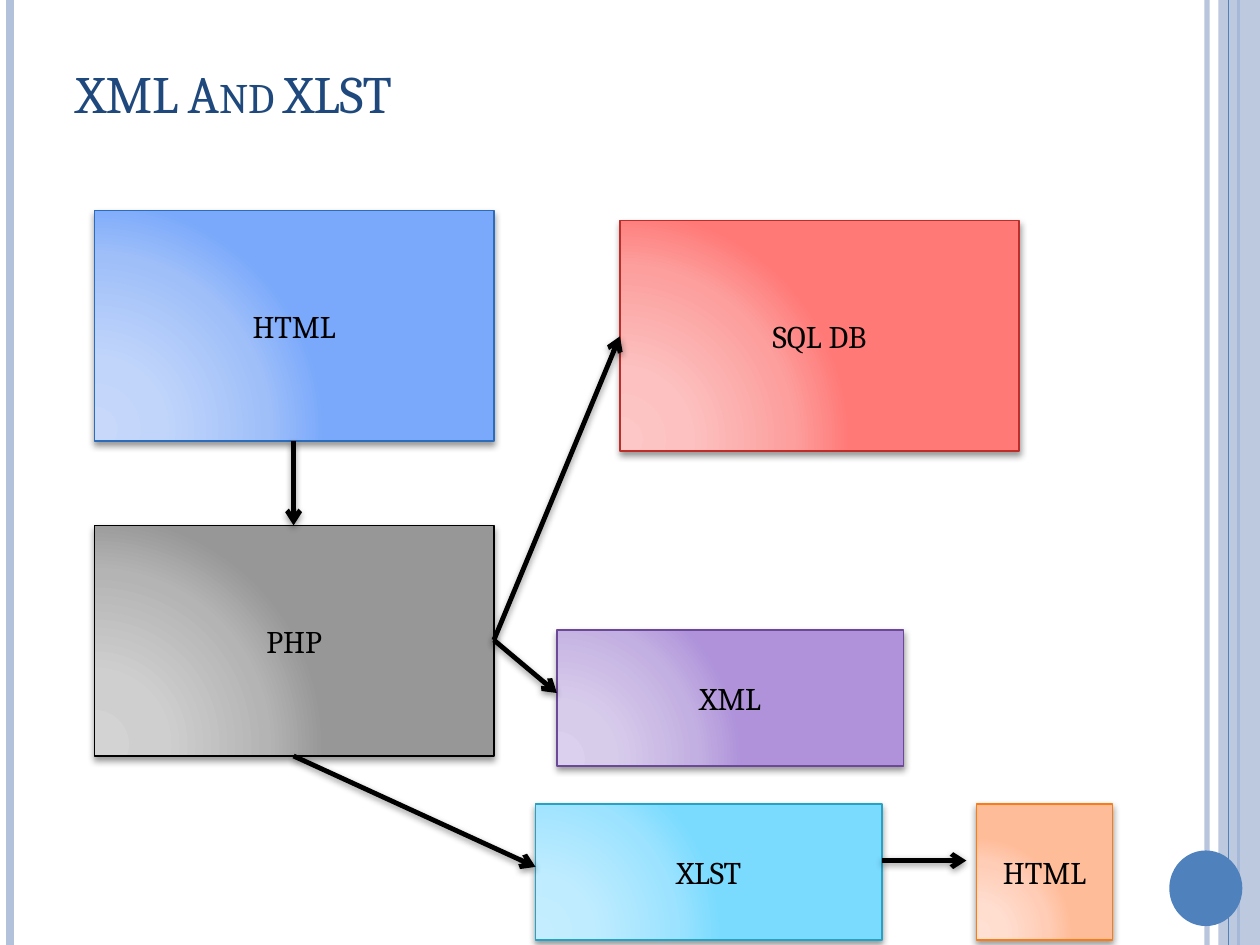
from pptx import Presentation
from pptx.dml.color import RGBColor
from pptx.enum.shapes import MSO_CONNECTOR as CONNECTOR, MSO_SHAPE as SHAPE
from pptx.enum.text import MSO_ANCHOR as ANCHOR, PP_ALIGN as ALIGN
from pptx.oxml import parse_xml
from pptx.oxml.ns import nsdecls, qn
from pptx.util import Inches, Pt

FONT = "Cambria"
TITLE = "XML And XLST"
COLORS = {"title": "1F497D", "ink": "000000", "accent": "4F81BD", "pale": "B3C1DB"}
STOPS = (0, 30, 75, 100)

RAILS = [
    (9.58, "pale", 3, 93),
    (0.08, "pale", 4.5, 100),
    (9.83, "accent", 1.5, 100),
    (9.75, "accent", 0.75, 100),
]
BAND = (9.67, 0, 0.33, 7.5)
DISC = (9.28, 6.75, 0.58, 0.6)

BOXES = [
    ("HTML", (0.75, 1.67, 3.17, 1.83), "2C6CB9", ("C7D8FB", "C1D5FA", "9FBFF9", "7AA9FB")),
    ("PHP", (0.75, 4.17, 3.17, 1.83), "000000", ("D3D3D3", "CFCFCF", "B4B4B4", "979797")),
    ("SQL DB", (4.92, 1.75, 3.17, 1.83), "BD2D29", ("FCC7C6", "FCC1C0", "FC9F9D", "FF7977")),
    ("XML", (4.42, 5, 2.75, 1.08), "6C4898", ("DBD0ED", "D8CCEB", "C3B0E2", "AF92DA")),
    ("XLST", (4.25, 6.38, 2.75, 1.08), "26A2C4", ("C4EEFF", "BFECFF", "9DE3FF", "7ADBFF")),
    ("HTML", (7.75, 6.38, 1.08, 1.08), "F97D16", ("FFE0D3", "FFDDCF", "FFCCB5", "FFBC99")),
]
ARROWS = [
    ((2.33, 3.5), (2.33, 4.17)),
    ((3.92, 5.08), (4.92, 2.67)),
    ((3.92, 5.08), (4.42, 5.5)),
    ((2.33, 6), (4.25, 6.88)),
    ((7, 6.83), (7.67, 6.83)),
]


def rgb(value):
    return RGBColor.from_string(value)


def set_alpha(properties, percent):
    color = properties.find(".//" + qn("a:srgbClr"))
    color.append(parse_xml(f'<a:alpha {nsdecls("a")} val="{percent * 1000}"/>'))


def add_shadow(shape, alpha, distance):
    shape._element.spPr.append(parse_xml(
        f'<a:effectLst {nsdecls("a")}><a:outerShdw blurRad="{Pt(4)}" dist="{Pt(distance)}" '
        f'dir="5400000" rotWithShape="0"><a:srgbClr val="{COLORS["ink"]}">'
        f'<a:alpha val="{alpha * 1000}"/></a:srgbClr></a:outerShdw></a:effectLst>'))


def add_glow_fill(shape, shades):
    stops = "".join(
        f'<a:gs pos="{position * 1000}"><a:srgbClr val="{shade}"/></a:gs>'
        for position, shade in zip(STOPS, shades))
    gradient = parse_xml(
        f'<a:gradFill {nsdecls("a")} rotWithShape="1"><a:gsLst>{stops}</a:gsLst>'
        '<a:path path="circle"><a:fillToRect l="5000" t="100000" r="120000" b="10000"/>'
        '</a:path></a:gradFill>')
    shape._element.spPr.find(qn("a:prstGeom")).addnext(gradient)


def format_text(shape, text, size, color, alignment):
    frame = shape.text_frame
    frame.text = text
    frame.word_wrap = True
    frame.vertical_anchor = ANCHOR.MIDDLE
    paragraph = frame.paragraphs[0]
    paragraph.alignment = alignment
    run = paragraph.runs[0]
    run.font.name = FONT
    run.font.size = Pt(size)
    run.font.color.rgb = rgb(color)
    return run


def add_line(slide, start, end, color, width):
    line = slide.shapes.add_connector(
        CONNECTOR.STRAIGHT, *(Inches(value) for value in (*start, *end)))
    line.line.color.rgb = rgb(color)
    line.line.width = Pt(width)
    return line


def add_rail(slide, x, color, width, alpha):
    rail = add_line(slide, (x, 0), (x, 7.5), COLORS[color], width)
    if alpha < 100:
        set_alpha(rail._element.spPr, alpha)
    rail._element.spPr.append(parse_xml(f'<a:effectLst {nsdecls("a")}/>'))


def add_plain_shape(slide, kind, place, color):
    shape = slide.shapes.add_shape(kind, *map(Inches, place))
    shape.shadow.inherit = False
    shape.fill.solid()
    shape.fill.fore_color.rgb = rgb(COLORS[color])
    shape.line.fill.background()
    return shape


def add_box(slide, label, place, outline, shades):
    box = slide.shapes.add_shape(SHAPE.RECTANGLE, *map(Inches, place))
    box.line.color.rgb = rgb(outline)
    box.line.width = Pt(1)
    add_glow_fill(box, shades)
    add_shadow(box, 40, 2)
    format_text(box, label, 18, COLORS["ink"], ALIGN.CENTER)


def add_arrow(slide, start, end):
    arrow = add_line(slide, start, end, COLORS["ink"], 2.75)
    arrow._element.spPr.find(qn("a:ln")).append(
        parse_xml(f'<a:tailEnd {nsdecls("a")} type="arrow"/>'))
    add_shadow(arrow, 42, 1.6)


def add_title(slide):
    title = slide.shapes.title
    title.left, title.top, title.width, title.height = map(Inches, (0.5, 0.3, 8.67, 0.87))
    run = format_text(title, TITLE, 30, COLORS["title"], ALIGN.LEFT)
    run.font._element.set("cap", "small")


def main():
    """Build the slide showing how PHP links HTML, a database, XML and XLST."""
    presentation = Presentation()
    presentation.slide_width, presentation.slide_height = Inches(10), Inches(7.5)
    slide = presentation.slides.add_slide(presentation.slide_layouts[5])
    for rail in RAILS[:3]:
        add_rail(slide, *rail)
    band = add_plain_shape(slide, SHAPE.RECTANGLE, BAND, "pale")
    set_alpha(band._element.spPr, 87)
    add_rail(slide, *RAILS[3])
    add_plain_shape(slide, SHAPE.OVAL, DISC, "accent")
    add_title(slide)
    for box in BOXES:
        add_box(slide, *box)
    for arrow in ARROWS:
        add_arrow(slide, *arrow)
    presentation.save("out.pptx")


if __name__ == "__main__":
    main()
